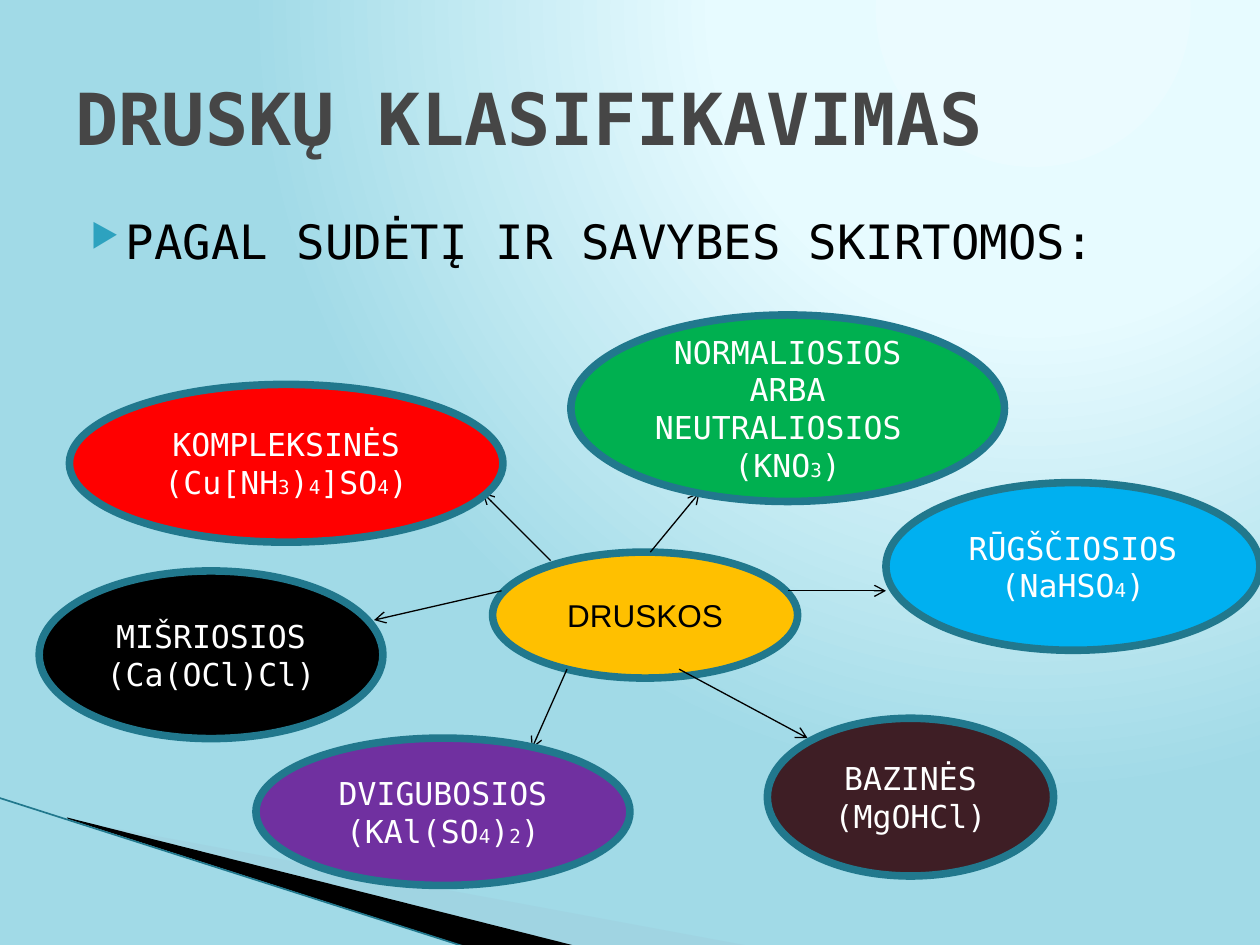
from lxml import etree
from pptx import Presentation
from pptx.dml.color import RGBColor
from pptx.enum.shapes import MSO_CONNECTOR as Line, MSO_SHAPE as Shape
from pptx.enum.text import MSO_ANCHOR as Anchor, MSO_AUTO_SIZE as AutoSize, PP_ALIGN as Align
from pptx.oxml import parse_xml
from pptx.oxml.ns import nsdecls, qn
from pptx.util import Cm, Pt

BLACK = RGBColor(0x00, 0x00, 0x00)
WHITE = RGBColor(0xFF, 0xFF, 0xFF)
TITLE_GREY = RGBColor(0x46, 0x46, 0x46)
TEAL = RGBColor(0x21, 0x78, 0x8D)
SWOOSH_BLUE = RGBColor(0xA0, 0xCB, 0xDC)
EDGE_BLUE = RGBColor(0x21, 0x78, 0x8D)
AMBER = RGBColor(0xFF, 0xC0, 0x00)
GREEN = RGBColor(0x00, 0xB0, 0x50)
SKY = RGBColor(0x00, 0xB0, 0xF0)
BROWN = RGBColor(0x3E, 0x1E, 0x25)
PURPLE = RGBColor(0x70, 0x30, 0xA0)
RED = RGBColor(0xFF, 0x00, 0x00)
MONO = "DejaVu Sans Mono"


def add_span(para, text, **formats):
    span = para.add_run()
    span.text = text
    span.font.color.rgb = formats.pop("color")
    for name, value in formats.items():
        setattr(span.font, name, value)


def add_line(start, end, color, width):
    line = page.shapes.add_connector(Line.STRAIGHT, *map(Cm, start + end))
    line.line.color.rgb = color
    line.line.width = Pt(width)
    etree.SubElement(line._element.spPr, qn("a:effectLst"))
    return line


deck = Presentation()
deck.slide_width, deck.slide_height = Cm(25.4), Cm(19.05)
page = deck.slides.add_slide(deck.slide_layouts[5])

# Background: light glow from the upper right
page._element.cSld.insert(0, parse_xml(
    f'<p:bg {nsdecls("p", "a")}><p:bgPr><a:gradFill rotWithShape="1"><a:gsLst>'
    '<a:gs pos="0"><a:srgbClr val="EBFBFF"/></a:gs>'
    '<a:gs pos="40000"><a:srgbClr val="E7FBFF"/></a:gs>'
    '<a:gs pos="100000"><a:srgbClr val="A1DAE7"/></a:gs></a:gsLst>'
    '<a:path path="circle"><a:fillToRect l="65000" b="98000"/></a:path>'
    '</a:gradFill><a:effectLst/></p:bgPr></p:bg>'))

# Corner decoration
swooshes = [
    ([(1.4, 16.53), (15.11, 19.07), (11.58, 19.07), (1.4, 16.51)], SWOOSH_BLUE, 40),
    ([(1.35, 16.48), (11.61, 19.07), (9.45, 19.1), (1.37, 16.51)], BLACK, 100),
]
for points, color, opacity in swooshes:
    corners = [(Cm(x), Cm(y)) for x, y in points]
    builder = page.shapes.build_freeform(*corners[0])
    builder.add_line_segments(corners[1:])
    swoosh = builder.convert_to_shape()
    swoosh.shadow.inherit = False
    swoosh.fill.solid()
    swoosh.fill.fore_color.rgb = color
    swoosh.line.fill.background()
    if opacity < 100:
        tint = swoosh._element.spPr.find(".//" + qn("a:srgbClr"))
        etree.SubElement(tint, qn("a:alpha"), val=str(opacity * 1000))
add_line((-0.03, 16.08), (9.42, 19.1), EDGE_BLUE, 0.95)

# Title and lead line
title = page.shapes.title
title.left, title.top, title.width, title.height = Cm(1.27), Cm(0.76), Cm(22.86), Cm(3.18)
title.text_frame.vertical_anchor = Anchor.MIDDLE
title.text_frame.auto_size = AutoSize.NONE
para = title.text_frame.paragraphs[0]
para.alignment = Align.LEFT
add_span(para, "DRUSKŲ KLASIFIKAVIMAS", size=Pt(41), name=MONO, color=TITLE_GREY, bold=True)

box = page.shapes.add_textbox(Cm(1.27), Cm(4.15), Cm(22.86), Cm(1.5))
box.text_frame.word_wrap = True
para = box.text_frame.paragraphs[0]
settings = para._p.get_or_add_pPr()
settings.set("marL", str(Cm(1.02)))
settings.set("indent", str(-Cm(0.71)))
bullet_color = etree.SubElement(settings, qn("a:buClr"))
etree.SubElement(bullet_color, qn("a:srgbClr"), val="2DA2BF")
etree.SubElement(settings, qn("a:buSzPct"), val="68000")
etree.SubElement(settings, qn("a:buChar"), char="▶")
add_span(para, "PAGAL SUDĖTĮ IR SAVYBES SKIRTOMOS:", size=Pt(27), name=MONO, color=BLACK)

# Ellipses: place, fill, text colour, font, lines of text; digits in formulas are small
salts = [
    ((9.93, 11.13, 6.15, 2.54), AMBER, BLACK, "Arial", ["DRUSKOS"]),
    ((11.51, 6.35, 8.74, 3.76), GREEN, WHITE, MONO,
     ["NORMALIOSIOS ARBA NEUTRALIOSIOS ", "(KNO3)"]),
    ((17.86, 9.73, 7.54, 3.38), SKY, WHITE, MONO, ["RŪGŠČIOSIOS", "(NaHSO4)"]),
    ((15.47, 14.48, 5.77, 3.18), BROWN, WHITE, MONO, ["BAZINĖS", "(MgOHCl)"]),
    ((5.16, 14.88, 7.54, 2.97), PURPLE, WHITE, MONO, ["DVIGUBOSIOS", "(KAl(SO4)2)"]),
    ((0.79, 11.51, 6.93, 3.38), BLACK, WHITE, MONO, ["MIŠRIOSIOS", "(Ca(OCl)Cl)"]),
    ((1.4, 7.75, 8.74, 3.18), RED, WHITE, MONO, ["KOMPLEKSINĖS", "(Cu[NH3)4]SO4)"]),
]
arrows = [
    ((15.88, 11.91), (17.86, 11.91)),
    ((13.69, 13.49), (16.28, 14.88)),
    ((10.11, 11.91), (7.54, 12.5)),
    ((11.43, 13.49), (10.72, 15.09)),
    ((13.11, 11.13), (14.1, 9.93)),
    ((11.1, 11.3), (9.73, 9.93)),
]
for number, (place, fill, color, font, lines) in enumerate(salts):
    ellipse = page.shapes.add_shape(Shape.OVAL, *map(Cm, place))
    ellipse.shadow.inherit = False
    ellipse.fill.solid()
    ellipse.fill.fore_color.rgb = fill
    ellipse.line.color.rgb = TEAL
    ellipse.line.width = Pt(4.33)
    frame = ellipse.text_frame
    frame.word_wrap = True
    frame.vertical_anchor = Anchor.MIDDLE
    for index, text in enumerate(lines):
        para = frame.add_paragraph() if index else frame.paragraphs[0]
        para.alignment = Align.CENTER
        marked = "".join(f"|{sign}|" if sign.isdigit() else sign for sign in text)
        for part in marked.split("|"):
            size = Pt(11 if part.isdigit() else 18)
            add_span(para, part, size=size, name=font, color=color)
    if number == 0:  # arrows lie above the centre and below the other ellipses
        for start, end in arrows:
            arrow = add_line(start, end, BLACK, 0.75)
            etree.SubElement(arrow.line._get_or_add_ln(), qn("a:tailEnd"), type="arrow")

deck.save("out.pptx")
